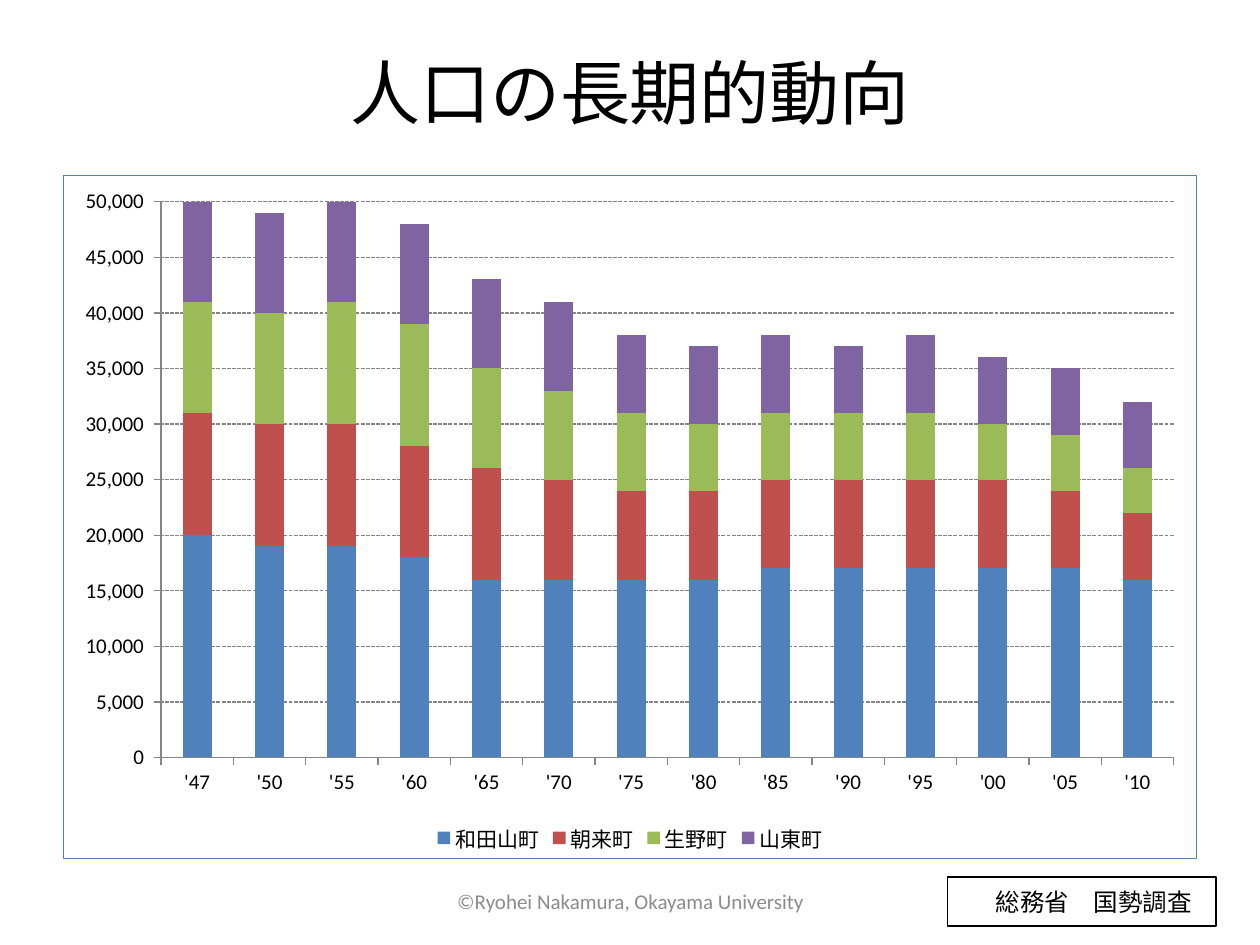
from lxml import etree
from pptx import Presentation
from pptx.chart.data import CategoryChartData
from pptx.dml.color import RGBColor
from pptx.enum.chart import XL_CHART_TYPE, XL_LEGEND_POSITION, XL_TICK_MARK
from pptx.enum.dml import MSO_LINE
from pptx.enum.shapes import MSO_SHAPE
from pptx.enum.text import MSO_ANCHOR, PP_ALIGN
from pptx.oxml import parse_xml
from pptx.oxml.ns import qn
from pptx.util import Inches, Pt

STACKED = XL_CHART_TYPE.COLUMN_STACKED
BOTTOM = XL_LEGEND_POSITION.BOTTOM
OUTSIDE = XL_TICK_MARK.OUTSIDE
SHORT_DASH = MSO_LINE.SQUARE_DOT
RECT = MSO_SHAPE.RECTANGLE
MIDDLE = MSO_ANCHOR.MIDDLE
CENTER = PP_ALIGN.CENTER

FONT = "Calibri"
BLACK = RGBColor(0x00, 0x00, 0x00)
WHITE = RGBColor(0xFF, 0xFF, 0xFF)
GRAY = RGBColor(0x8C, 0x8C, 0x8C)
AXIS_GRAY = RGBColor(0x86, 0x86, 0x86)
BLUE = RGBColor(0x4F, 0x81, 0xBD)
RED = RGBColor(0xC0, 0x50, 0x4D)
GREEN = RGBColor(0x9B, 0xBB, 0x59)
PURPLE = RGBColor(0x80, 0x64, 0xA2)

YEARS = ["'47", "'50", "'55", "'60", "'65", "'70", "'75",
         "'80", "'85", "'90", "'95", "'00", "'05", "'10"]
TOWNS = [
    ("和田山町", BLUE, [20000, 19000, 19000, 18000, 16000, 16000, 16000,
                    16000, 17000, 17000, 17000, 17000, 17000, 16000]),
    ("朝来町", RED, [11000, 11000, 11000, 10000, 10000, 9000, 8000,
                  8000, 8000, 8000, 8000, 8000, 7000, 6000]),
    ("生野町", GREEN, [10000, 10000, 11000, 11000, 9000, 8000, 7000,
                    6000, 6000, 6000, 6000, 5000, 5000, 4000]),
    ("山東町", PURPLE, [9000, 9000, 9000, 9000, 8000, 8000, 7000,
                     7000, 7000, 6000, 7000, 6000, 6000, 6000]),
]


def write(sp, text, size, color):
    tf = sp.text_frame
    tf.word_wrap = True
    tf.vertical_anchor = MIDDLE
    p = tf.paragraphs[0]
    p.alignment = CENTER
    r = p.add_run()
    r.text = text
    r.font.size = Pt(size)
    r.font.name = FONT
    r.font.color.rgb = color


prs = Presentation()
prs.slide_width = Inches(10)
prs.slide_height = Inches(7.5)
s = prs.slides.add_slide(prs.slide_layouts[5])

title = s.shapes.title
title.left, title.top = Inches(0.5), Inches(0.3)
title.width, title.height = Inches(9), Inches(0.85)
write(title, "人口の長期的動向", 40, BLACK)

data = CategoryChartData(number_format="#,##0")
data.categories = YEARS
for name, color, values in TOWNS:
    data.add_series(name, values)
chart = s.shapes.add_chart(STACKED, Inches(0.5), Inches(1.39),
                           Inches(9), Inches(5.43), data).chart
chart.has_title = False
chart.font.name = FONT
chart.font.size = Pt(10)
chart.font.color.rgb = BLACK

plot = chart.plots[0]
plot.vary_by_categories = False
plot.gap_width = 150
plot.overlap = 100
for series, (name, color, values) in zip(plot.series, TOWNS):
    series.format.fill.solid()
    series.format.fill.fore_color.rgb = color

for axis in (chart.category_axis, chart.value_axis):
    axis.major_tick_mark = OUTSIDE
    axis.tick_labels.font.size = Pt(12)
    axis.format.line.color.rgb = AXIS_GRAY
    axis.format.line.width = Pt(0.75)

values_axis = chart.value_axis
values_axis.minimum_scale = 0
values_axis.maximum_scale = 50000
values_axis.major_unit = 5000
values_axis.tick_labels.number_format = r"#,##0_);[Red]\(#,##0\)"
values_axis.tick_labels.number_format_is_linked = False
values_axis.has_major_gridlines = True
grid = values_axis.major_gridlines.format.line
grid.color.rgb = AXIS_GRAY
grid.width = Pt(0.75)
grid.dash_style = SHORT_DASH

chart.has_legend = True
chart.legend.position = BOTTOM
chart.legend.include_in_layout = False
chart.legend.font.size = Pt(12)

plot_area = chart.element.find(qn("c:chart")).find(qn("c:plotArea"))
for old in plot_area.findall(qn("c:layout")):
    plot_area.remove(old)
layout = etree.Element(qn("c:layout"))
manual = etree.SubElement(layout, qn("c:manualLayout"))
for tag, val in (("layoutTarget", "inner"), ("xMode", "edge"), ("yMode", "edge"),
                 ("x", "0.086"), ("y", "0.038"), ("w", "0.894"), ("h", "0.814")):
    etree.SubElement(manual, qn("c:" + tag)).set("val", val)
plot_area.insert(0, layout)

chart.element.find(qn("c:chart")).addnext(parse_xml(
    '<c:spPr xmlns:c="http://schemas.openxmlformats.org/drawingml/2006/chart" '
    'xmlns:a="http://schemas.openxmlformats.org/drawingml/2006/main">'
    f'<a:noFill/><a:ln w="{Pt(0.75)}"><a:solidFill><a:srgbClr val="{BLUE}"/>'
    '</a:solidFill></a:ln></c:spPr>'))

credit = s.shapes.add_textbox(Inches(3.42), Inches(6.95), Inches(3.17), Inches(0.4))
write(credit, "©Ryohei Nakamura, Okayama University", 12, GRAY)

source = s.shapes.add_shape(RECT, Inches(7.52), Inches(6.96), Inches(2.13), Inches(0.39))
source.shadow.inherit = False
source.fill.solid()
source.fill.fore_color.rgb = WHITE
source.line.color.rgb = BLACK
source.line.width = Pt(1)
write(source, "　総務省　国勢調査", 14, BLACK)

prs.save("out.pptx")
